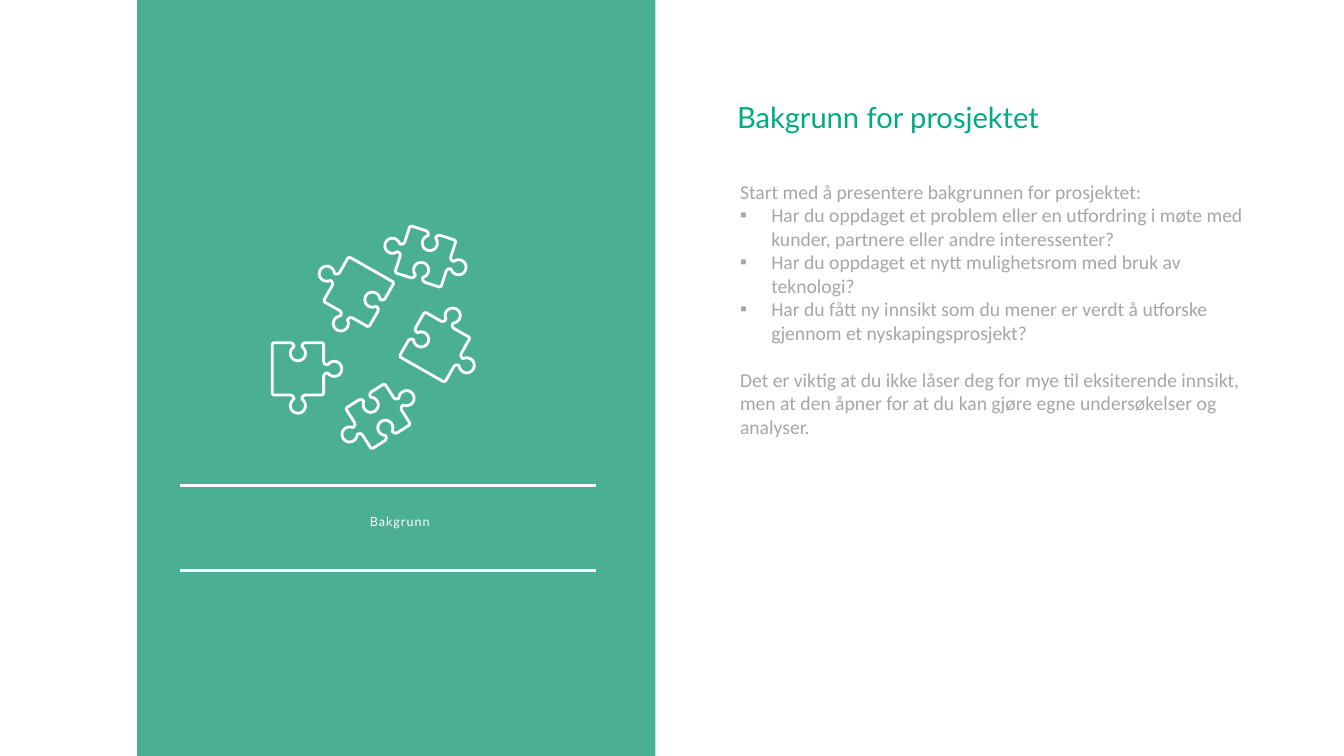
"""Build the project background slide with its puzzle panel."""
import math

from lxml import etree
from pptx import Presentation
from pptx.dml.color import RGBColor
from pptx.enum.shapes import MSO_CONNECTOR, MSO_SHAPE
from pptx.enum.text import MSO_ANCHOR, MSO_AUTO_SIZE, PP_ALIGN
from pptx.oxml.ns import qn
from pptx.util import Inches, Pt

GREEN = RGBColor(0x4B, 0xAF, 0x94)
TITLE_GREEN = RGBColor(0x00, 0xAB, 0x84)
GREY = RGBColor(0xA6, 0xA6, 0xA6)
WHITE = RGBColor(0xFF, 0xFF, 0xFF)
RECTANGLE = MSO_SHAPE.RECTANGLE
STRAIGHT = MSO_CONNECTOR.STRAIGHT
TOP = MSO_ANCHOR.TOP
NO_FIT = MSO_AUTO_SIZE.NONE
LEFT, CENTER = PP_ALIGN.LEFT, PP_ALIGN.CENTER


def write(p, text, size, font, color, align=LEFT, leading=1.0, before=0,
          bullet=None, tracking=0):
    p.alignment = align
    p.line_spacing = leading
    p.space_before = Pt(before)
    p.space_after = Pt(0)
    pPr = p._p.get_or_add_pPr()
    indent = Inches(0.31) if bullet else 0
    pPr.set("marL", str(indent))
    pPr.set("indent", str(-indent))
    if bullet:
        etree.SubElement(pPr, qn("a:buChar")).set("char", bullet)
    else:
        etree.SubElement(pPr, qn("a:buNone"))
    r = p.add_run()
    r.text = text
    r.font.size = Pt(size)
    r.font.name = font
    r.font.color.rgb = color
    if tracking:
        r.font._element.set("spc", str(tracking))


def frame(s, left, top, width, height, inset_x=0, inset_y=0):
    s.left, s.top = Inches(left), Inches(top)
    s.width, s.height = Inches(width), Inches(height)
    tf = s.text_frame
    tf.word_wrap = True
    tf.auto_size = NO_FIT
    tf.vertical_anchor = TOP
    tf.margin_left = tf.margin_right = Inches(inset_x)
    tf.margin_top = tf.margin_bottom = Inches(inset_y)
    return tf


prs = Presentation()
prs.slide_width, prs.slide_height = Inches(13.33), Inches(7.5)
slide = prs.slides.add_slide(prs.slide_layouts[1])
shapes = slide.shapes

panel = shapes.add_shape(RECTANGLE, Inches(1.36), 0, Inches(5.14), Inches(7.5))
panel.shadow.inherit = False
panel.fill.solid()
panel.fill.fore_color.rgb = GREEN
panel.line.fill.background()

for y in (4.82, 5.66):
    rule = shapes.add_connector(STRAIGHT, Inches(1.79), Inches(y), Inches(5.91), Inches(y))
    rule.line.color.rgb = WHITE
    rule.line.width = Pt(2)
    etree.SubElement(rule._element.spPr, qn("a:effectLst"))

tf = frame(shapes.add_textbox(0, 0, 0, 0), 2.73, 5.1, 2.47, 0.15)
write(tf.paragraphs[0], "Bakgrunn", 9, "Lato", WHITE, align=CENTER, tracking=70)

KNOB_DEPTH, KNOB_RADIUS, CORNER = 0.18, 0.075, 0.015
neck = [(-0.07, 0), (-0.05, 0.01), (-0.04, 0.03), (-0.04, 0.04)]
arc = [(KNOB_RADIUS * math.sin(math.radians(a)),
        KNOB_DEPTH - KNOB_RADIUS - KNOB_RADIUS * math.cos(math.radians(a)))
       for a in range(-45, -316, -15)]
KNOB = neck + arc + [(-u, v) for u, v in reversed(neck)]

DIRECTIONS = [(1, 0), (0, 1), (-1, 0), (0, -1)]
CORNER_PIECE = (-1, 1, 1, 0)
MIDDLE_PIECE = (-1, 1, -1, 1)
PIECES = [
    (2.7, 3.4, 0.69, 0.7, 0, CORNER_PIECE),
    (4.09, 3.06, 0.69, 0.7, 299.6, CORNER_PIECE),
    (3.09, 2.58, 0.69, 0.7, 119.6, CORNER_PIECE),
    (3.8, 2.3, 0.84, 0.49, 18, MIDDLE_PIECE),
    (3.34, 3.89, 0.82, 0.48, 327.5, MIDDLE_PIECE),
]
for left, top, width, height, angle, sides in PIECES:
    tabs = [KNOB_DEPTH * (side == 1) for side in sides]
    body_w = width - tabs[1] - tabs[3]
    body_h = height - tabs[0] - tabs[2]
    x, y = tabs[3], tabs[0]
    outline = []
    for (dx, dy), side in zip(DIRECTIONS, sides):
        length = body_w if dx else body_h
        profile = [(length / 2 + u, side * v) for u, v in KNOB] if side else []
        for along, out in [(CORNER, 0)] + profile + [(length - CORNER, 0)]:
            outline.append(((x + dx * along + dy * out) * 1000,
                            (y + dy * along - dx * out) * 1000))
        x, y = x + dx * length, y + dy * length
    builder = shapes.build_freeform(*outline[0], scale=Inches(1) / 1000)
    builder.add_line_segments(outline[1:], close=True)
    piece = builder.convert_to_shape(Inches(left), Inches(top))
    piece.left, piece.top = Inches(left), Inches(top)
    piece.rotation = angle
    piece.shadow.inherit = False
    piece.fill.background()
    piece.line.color.rgb = WHITE
    piece.line.width = Pt(2)

tf = frame(shapes.title, 7.31, 0.99, 3.62, 0.68)
write(tf.paragraphs[0], "Bakgrunn for prosjektet", 20.8, "Lato", TITLE_GREEN)

BODY = [
    ("Start med å presentere bakgrunnen for prosjektet:", None, 0),
    ("Har du oppdaget et problem eller en utfordring i møte med kunder, "
     "partnere eller andre interessenter?", "▪", 0),
    ("Har du oppdaget et nytt mulighetsrom med bruk av teknologi?", "▪", 0),
    ("Har du fått ny innsikt som du mener er verdt å utforske gjennom et "
     "nyskapingsprosjekt?", "▪", 0),
    ("Det er viktig at du ikke låser deg for mye til eksiterende innsikt, men at "
     "den åpner for at du kan gjøre egne undersøkelser og analyser.", None, 16.8),
]
tf = frame(slide.placeholders[1], 7.31, 1.73, 5.23, 2.93, 0.03, 0.05)
for i, (text, bullet, before) in enumerate(BODY):
    p = tf.add_paragraph() if i else tf.paragraphs[0]
    write(p, text, 14, "Calibri", GREY, leading=Pt(16.8), before=before, bullet=bullet)

prs.save("out.pptx")
